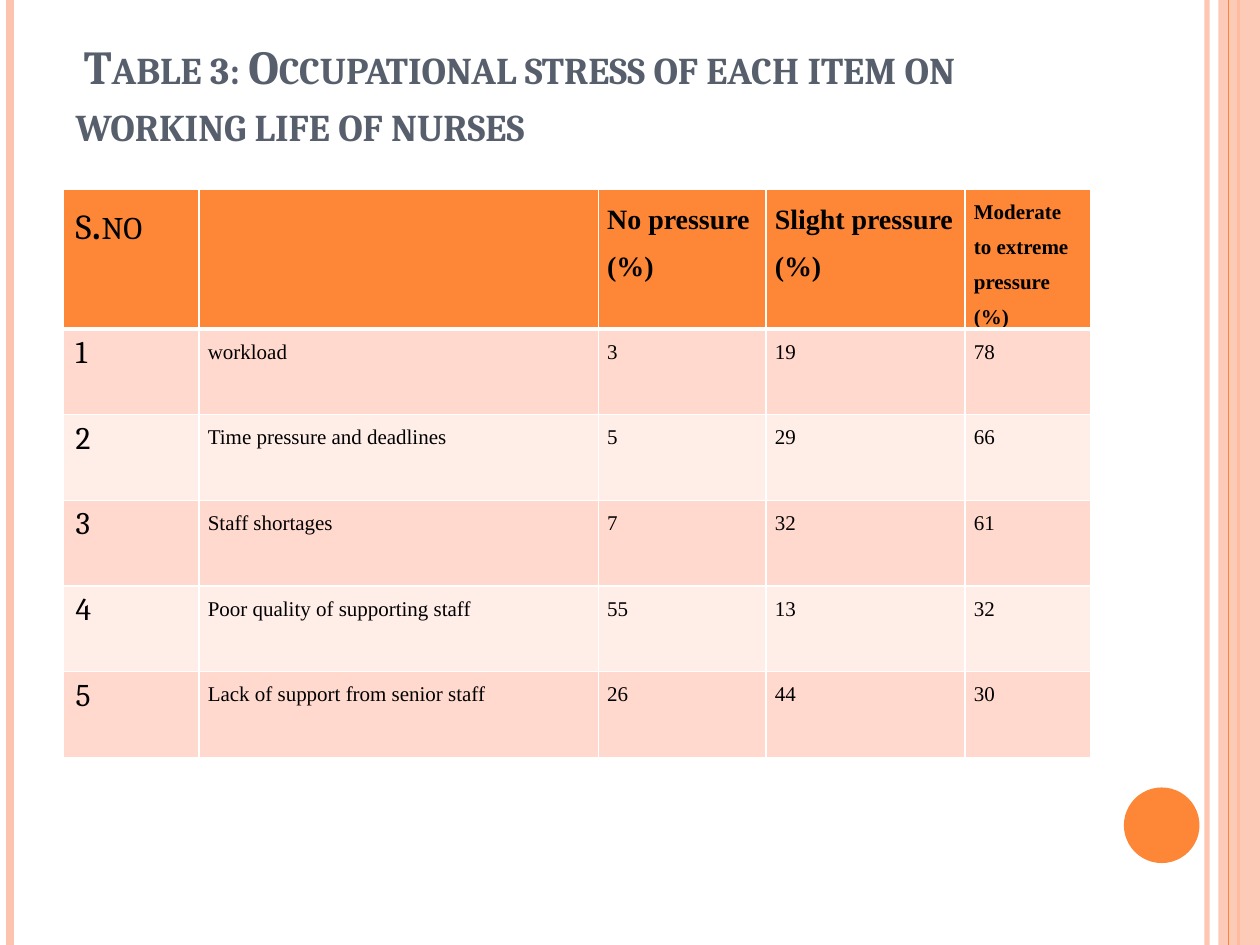
from pptx import Presentation
from pptx.dml.color import RGBColor as RGB
from pptx.enum.shapes import MSO_CONNECTOR as Conn, MSO_SHAPE as Kind
from pptx.enum.text import MSO_ANCHOR as Anchor, MSO_AUTO_SIZE as Auto, PP_ALIGN as Align
from pptx.oxml.ns import qn
from pptx.util import Inches, Pt
from lxml.etree import SubElement as Sub

HUES = {"orange": "FE8637", "peach": "FEC3AE", "slate": "575F6D",
        "odd": "FFD9CE", "even": "FFEDE8", "white": "FFFFFF", "black": "000000"}
SERIF, ROMAN = "Cambria", "Times New Roman"
TITLE = " Table 3: Occupational stress of each item on working life of nurses"

# Stripes: x, colour, width in points, opacity in percent
LEFT = [(9.58, "peach", 3, 93), (0.08, "peach", 4.5, 100), (9.83, "orange", 1.5, 100)]
RIGHT = (9.75, "orange", 0.75, 100)

COLS = [1.08, 3.17, 1.33, 1.58, 1]
ROW = 0.68
# Header cells: lines of text and their size
HEADS = [(["No pressure", "(%)"], 16), (["Slight pressure", "(%)"], 16),
         (["Moderate to extreme pressure", "(%)"], 12)]
ITEMS = [("workload", 3, 19, 78),
         ("Time pressure and deadlines", 5, 29, 66),
         ("Staff shortages", 7, 32, 61),
         ("Poor quality of supporting staff", 55, 13, 32),
         ("Lack of support from senior staff", 26, 44, 30)]


def hue(name):
    return RGB.from_string(HUES[name])


def fade(fill, pct):
    """Set the opacity of a solid fill's colour element."""
    if pct < 100:
        Sub(fill.find(".//" + qn("a:srgbClr")), qn("a:alpha"), val=str(pct * 1000))


def add_line(slide, x, color, width, pct):
    line = slide.shapes.add_connector(
        Conn.STRAIGHT, Inches(x), Inches(0), Inches(x), Inches(7.5))
    line.line.color.rgb = hue(color)
    line.line.width = Pt(width)
    props = line._element.spPr
    fade(props, pct)
    Sub(props, qn("a:effectLst"))


def add_shape(slide, kind, box, color, pct=100):
    shape = slide.shapes.add_shape(kind, *map(Inches, box))
    shape.shadow.inherit = False
    shape.fill.solid()
    shape.fill.fore_color.rgb = hue(color)
    shape.line.fill.background()
    fade(shape._element.spPr, pct)


def add_run(para, text, size, face, color="black", bold=False):
    run = para.add_run()
    run.text = text
    for key, val in {"size": Pt(size), "name": face, "bold": bold}.items():
        setattr(run.font, key, val)
    run.font.color.rgb = hue(color)
    return run


def set_title(slide):
    title = slide.shapes.title
    box = {"left": 0.5, "top": 0.3, "width": 8.17, "height": 0.95}
    for key, val in box.items():
        setattr(title, key, Inches(val))
    frame = title.text_frame
    look = {"word_wrap": True, "auto_size": Auto.NONE, "vertical_anchor": Anchor.BOTTOM}
    for key, val in look.items():
        setattr(frame, key, val)
    para = frame.paragraphs[0]
    para.alignment = Align.LEFT
    run = add_run(para, TITLE, 27, SERIF, "slate", True)
    run._r.get_or_add_rPr().set("cap", "small")


def style_cell(cell, color, base):
    """Give a cell white borders, with the given bottom width, and a fill."""
    props = cell._tc.get_or_add_tcPr()
    for tag, width in (("lnL", 1), ("lnR", 1), ("lnT", 1), ("lnB", base)):
        edge = Sub(props, qn("a:" + tag), w=str(Pt(width)))
        Sub(Sub(edge, qn("a:solidFill")), qn("a:srgbClr"), val=HUES["white"])
    cell.fill.solid()
    cell.fill.fore_color.rgb = hue(color)


def fill_cell(cell, lines, size, bold=False):
    """Write spaced lines of text in a cell with narrow margins."""
    gaps = {"margin_left": 0.07, "margin_right": 0.07, "margin_top": 0, "margin_bottom": 0}
    for key, val in gaps.items():
        setattr(cell, key, Inches(val))
    frame = cell.text_frame
    for n, text in enumerate(lines):
        para = frame.add_paragraph() if n else frame.paragraphs[0]
        para.line_spacing = 1.5
        add_run(para, text, size, ROMAN, bold=bold)


def add_grid(slide):
    count = len(ITEMS) + 1
    table = slide.shapes.add_table(
        count, len(COLS), Inches(0.5), Inches(1.5),
        Inches(sum(COLS)), Inches(ROW * count)).table
    for col, width in zip(table.columns, COLS):
        col.width = Inches(width)
    for n, row in enumerate(table.rows):
        row.height = Inches(ROW)
        color = "orange" if n == 0 else "odd" if n % 2 else "even"
        for cell in row.cells:
            style_cell(cell, color, 1 if n else 3)

    # Header row
    para = table.cell(0, 0).text_frame.paragraphs[0]
    for text, size in (("S", 20), (".", 28), ("NO", 18)):
        add_run(para, text, size, SERIF)
    for c, (lines, size) in enumerate(HEADS, 2):
        fill_cell(table.cell(0, c), lines, size, True)

    # Numbered items
    for r, item in enumerate(ITEMS, 1):
        add_run(table.cell(r, 0).text_frame.paragraphs[0], str(r), 18, SERIF)
        for c, val in enumerate(item, 1):
            fill_cell(table.cell(r, c), [str(val)], 12)


def main():
    deck = Presentation()
    deck.slide_width, deck.slide_height = Inches(10), Inches(7.5)
    slide = deck.slides.add_slide(deck.slide_layouts[5])

    # Side stripes and disc
    for stripe in LEFT:
        add_line(slide, *stripe)
    add_shape(slide, Kind.RECTANGLE, (9.67, 0, 0.33, 7.5), "peach", 87)
    add_line(slide, *RIGHT)
    add_shape(slide, Kind.OVAL, (8.92, 6.25, 0.6, 0.6), "orange")

    # Content
    set_title(slide)
    add_grid(slide)
    deck.save("out.pptx")


if __name__ == "__main__":
    main()
